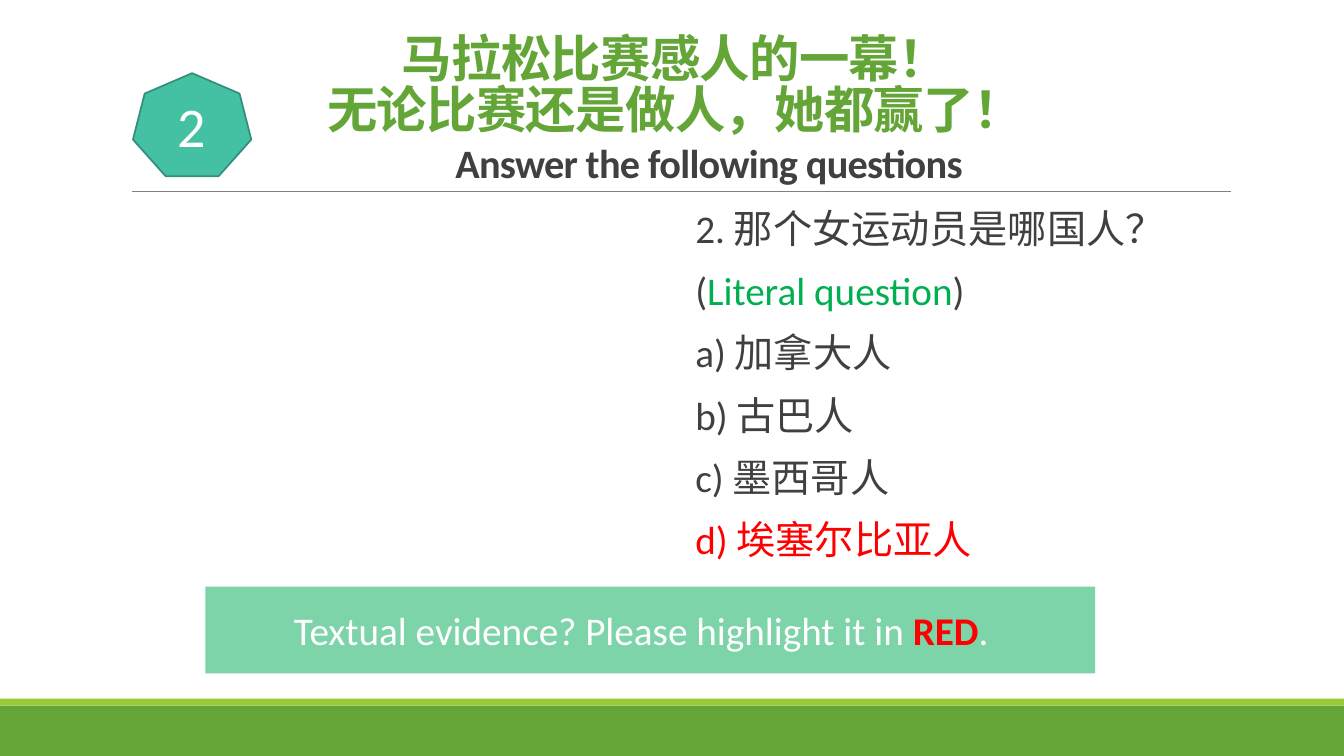
from lxml import etree
from pptx import Presentation
from pptx.dml.color import RGBColor
from pptx.enum.shapes import MSO_CONNECTOR, MSO_SHAPE
from pptx.enum.text import MSO_ANCHOR, PP_ALIGN
from pptx.oxml.ns import qn
from pptx.util import Pt

RECT, HEPTAGON = MSO_SHAPE.RECTANGLE, MSO_SHAPE.HEPTAGON
STRAIGHT = MSO_CONNECTOR.STRAIGHT
TOP, MIDDLE, BOTTOM = MSO_ANCHOR.TOP, MSO_ANCHOR.MIDDLE, MSO_ANCHOR.BOTTOM
LEFT, CENTER = PP_ALIGN.LEFT, PP_ALIGN.CENTER

GREEN = RGBColor(0x63, 0xA5, 0x37)
LIME = RGBColor(0x99, 0xCB, 0x38)
TEAL = RGBColor(0x44, 0xC1, 0xA3)
DARK_TEAL = RGBColor(0x32, 0x8F, 0x79)
MINT = RGBColor(0x7D, 0xD4, 0xA9)
GRAY = RGBColor(0x80, 0x80, 0x80)
DARK = RGBColor(0x40, 0x40, 0x40)
LITERAL = RGBColor(0x00, 0xB0, 0x50)
RED = RGBColor(0xFF, 0x00, 0x00)
WHITE = RGBColor(0xFF, 0xFF, 0xFF)
LATIN, CJK = "Calibri", "Noto Sans CJK SC"

WIDTH, HEIGHT = 960, 540
TITLE = ["马拉松比赛感人的一幕！", "无论比赛还是做人，她都赢了！"]
SUBTITLE = "Answer the following questions"
QUESTION = [
    [("2. 那个女运动员是哪国人？", DARK)],
    [("(", DARK), ("Literal question", LITERAL), (")", DARK)],
    [("a) 加拿大人", DARK)],
    [("b) 古巴人", DARK)],
    [("c) 墨西哥人", DARK)],
    [("d) 埃塞尔比亚人", RED)],
]
EVIDENCE = [("Textual evidence? Please highlight it in ", WHITE, False),
            ("RED", RED, True), (".", WHITE, False)]


def add_shape(s, kind, box, fill, line=None):
    sp = s.shapes.add_shape(kind, *map(Pt, box))
    sp.shadow.inherit = False
    sp.fill.solid()
    sp.fill.fore_color.rgb = fill
    if line is None:
        sp.line.fill.background()
    else:
        sp.line.color.rgb = line
        sp.line.width = Pt(1.25)
    return sp


def set_frame(sp, anchor, insets=(7.2, 3.6, 7.2, 3.6)):
    tf = sp.text_frame
    tf.word_wrap = True
    tf.vertical_anchor = anchor
    (tf.margin_left, tf.margin_top,
     tf.margin_right, tf.margin_bottom) = map(Pt, insets)
    return tf


def next_paragraph(tf, index, align, spacing=None):
    p = tf.add_paragraph() if index else tf.paragraphs[0]
    p.alignment = align
    if spacing:
        p.line_spacing = Pt(spacing)
    return p


def add_run(p, text, size, color, bold=False, tracking=0):
    r = p.add_run()
    r.text = text
    r.font.size = Pt(size)
    r.font.name = LATIN
    r.font.bold = bold
    r.font.color.rgb = color
    rPr = r.font._element
    etree.SubElement(rPr, qn("a:ea")).set("typeface", CJK)
    if tracking:
        rPr.set("spc", str(int(tracking * 100)))


def add_background(s):
    add_shape(s, RECT, (0, 504, WIDTH, 36), GREEN)
    add_shape(s, RECT, (0, 499, WIDTH, 5), LIME)
    rule = s.shapes.add_connector(STRAIGHT, Pt(94.3), Pt(136.8), Pt(879), Pt(136.8))
    rule.line.color.rgb = GRAY
    rule.line.width = Pt(0.5)
    etree.SubElement(rule._element.spPr, qn("a:effectLst"))


def add_title(s):
    sp = s.shapes.add_textbox(Pt(86.4), Pt(22.3), Pt(792), Pt(114.5))
    tf = set_frame(sp, BOTTOM)
    for i, text in enumerate(TITLE):
        add_run(next_paragraph(tf, i, CENTER, 36.7), text, 36, GREEN, True, -0.5)
    p = next_paragraph(tf, len(TITLE), CENTER, 34)
    p._p.get_or_add_pPr().set("marL", str(Pt(48)))
    add_run(p, SUBTITLE, 28.8, DARK, True, -0.5)


def add_question(s):
    sp = s.shapes.add_textbox(Pt(489.6), Pt(145.4), Pt(388.8), Pt(316.8))
    tf = set_frame(sp, TOP, (7.2, 3.6, 0, 3.6))
    for i, runs in enumerate(QUESTION):
        p = next_paragraph(tf, i, LEFT, 30.5)
        p.space_before = Pt(12 if i else 0)
        p.space_after = Pt(2)
        for text, color in runs:
            add_run(p, text, 28, color)


def main():
    prs = Presentation()
    prs.slide_width, prs.slide_height = Pt(WIDTH), Pt(HEIGHT)
    s = prs.slides.add_slide(prs.slide_layouts[6])
    add_background(s)

    badge = add_shape(s, HEPTAGON, (95, 52.3, 84.5, 73.7), TEAL, DARK_TEAL)
    add_run(next_paragraph(set_frame(badge, MIDDLE), 0, CENTER), "2", 40, WHITE)

    add_title(s)
    add_question(s)

    banner = add_shape(s, RECT, (146.7, 419, 635.6, 62), MINT)
    p = next_paragraph(set_frame(banner, MIDDLE, (7.2, 3.6, 20, 3.6)), 0, CENTER)
    for text, color, bold in EVIDENCE:
        add_run(p, text, 28, color, bold)

    prs.save("out.pptx")


if __name__ == "__main__":
    main()
